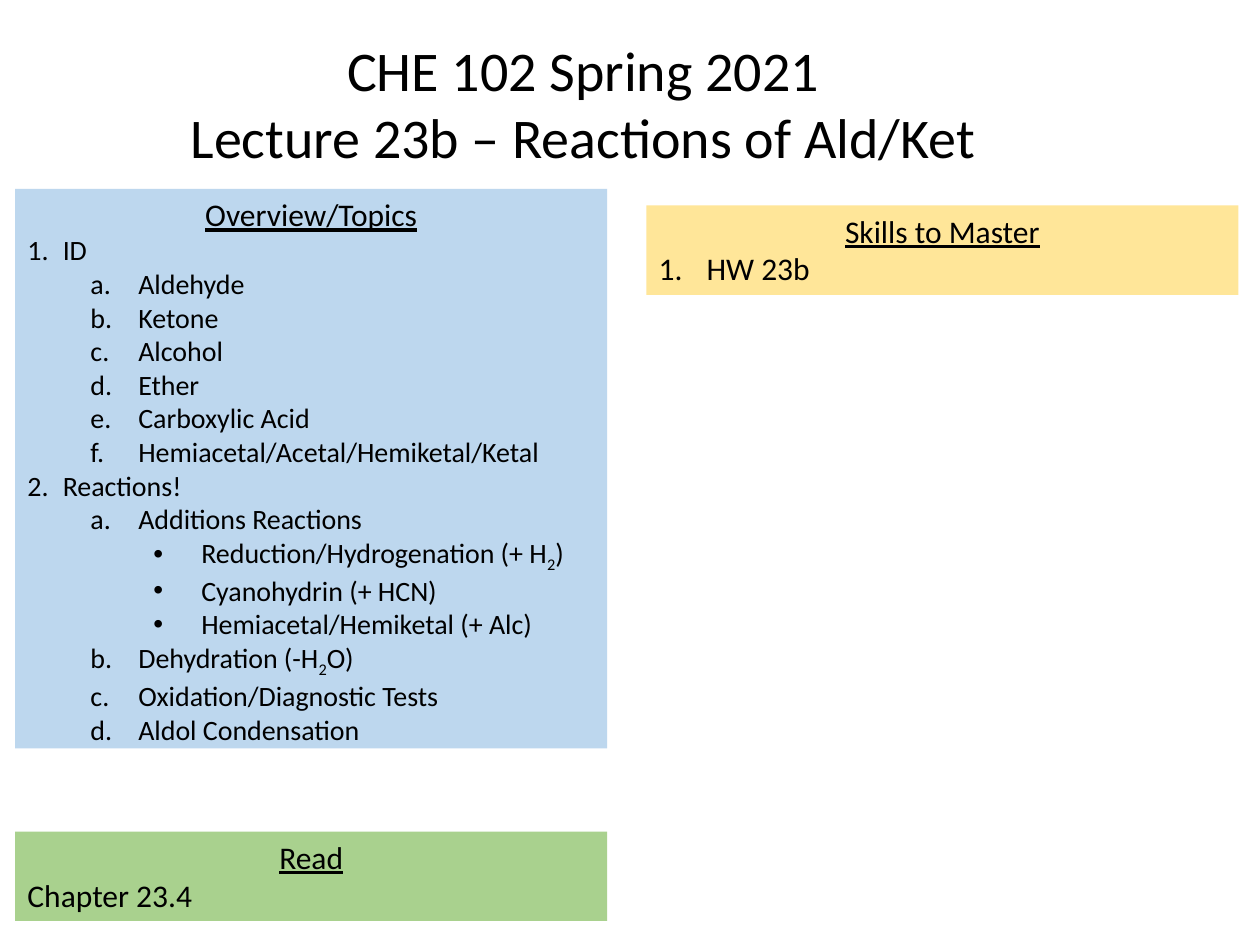
from lxml.etree import SubElement
from pptx import Presentation
from pptx.dml.color import RGBColor
from pptx.enum.shapes import MSO_SHAPE
from pptx.enum.text import MSO_ANCHOR, MSO_AUTO_SIZE, PP_ALIGN
from pptx.oxml.ns import qn
from pptx.util import Inches, Pt

FONT = "Calibri"
TITLE = "CHE 102 Spring 2021\nLecture 23b – Reactions of Ald/Ket"
PANEL_WIDTH = 4.7
LEFT_COLUMN, RIGHT_COLUMN = 0.12, 5.13

# Each item is (list style, text); "_" marks the next character as a subscript.
PANELS = [
    dict(heading="Overview/Topics", left=LEFT_COLUMN, top=1.5, height=4.44,
         fill="BDD7EE", size=16, items=[
             ("topic", "ID"),
             ("subtopic", "Aldehyde"),
             ("subtopic", "Ketone"),
             ("subtopic", "Alcohol"),
             ("subtopic", "Ether"),
             ("subtopic", "Carboxylic Acid"),
             ("subtopic", "Hemiacetal/Acetal/Hemiketal/Ketal"),
             ("topic", "Reactions!"),
             ("subtopic", "Additions Reactions"),
             ("example", "Reduction/Hydrogenation (+ H_2)"),
             ("example", "Cyanohydrin (+ HCN)"),
             ("example", "Hemiacetal/Hemiketal (+ Alc)"),
             ("subtopic", "Dehydration (-H_2O)"),
             ("subtopic", "Oxidation/Diagnostic Tests"),
             ("subtopic", "Aldol Condensation"),
         ]),
    dict(heading="Skills to Master", left=RIGHT_COLUMN, top=1.63, height=0.71,
         fill="FFE699", size=18, items=[("skill", "HW 23b")]),
    dict(heading="Read", left=LEFT_COLUMN, top=6.6, height=0.71,
         fill="A9D18E", size=18, items=[("plain", "Chapter 23.4")]),
]

# style: (level, text indent, hanging indent, numbering scheme or None for a bullet)
LIST_STYLES = {
    "topic": (0, 0.28, 0.28, "arabicPeriod"),
    "skill": (0, 0.38, 0.38, "arabicPeriod"),
    "subtopic": (1, 0.88, 0.38, "alphaLcPeriod"),
    "example": (2, 1.38, 0.38, None),
}


def rgb(color):
    return RGBColor.from_string(color)


def style_run(run, size, underline=False):
    run.font.name = FONT
    run.font.size = Pt(size)
    run.font.color.rgb = rgb("000000")
    run.font.underline = underline


def apply_list_style(paragraph, style):
    """Set the level, hanging indent and number or bullet of a paragraph."""
    level, indent, hanging, numbering = LIST_STYLES[style]
    paragraph.level = level
    properties = paragraph._p.get_or_add_pPr()
    properties.set("marL", str(Inches(indent)))
    properties.set("indent", str(-Inches(hanging)))
    if numbering:
        SubElement(properties, qn("a:buFont"), typeface="+mj-lt")
        SubElement(properties, qn("a:buAutoNum"), type=numbering)
    else:
        SubElement(properties, qn("a:buFont"), typeface="Arial")
        SubElement(properties, qn("a:buChar"), char="•")


def add_item(frame, style, text, size):
    paragraph = frame.add_paragraph()
    paragraph.alignment = PP_ALIGN.LEFT
    if style in LIST_STYLES:
        apply_list_style(paragraph, style)
    before, _, after = text.partition("_")
    for position, part in enumerate((before, after[:1], after[1:])):
        if part:
            run = paragraph.add_run()
            run.text = part
            style_run(run, size)
            if position == 1:
                run.font._element.set("baseline", "-25000")


def add_panel(slide, heading, left, top, height, fill, size, items):
    panel = slide.shapes.add_shape(
        MSO_SHAPE.RECTANGLE, Inches(left), Inches(top),
        Inches(PANEL_WIDTH), Inches(height))
    panel.shadow.inherit = False
    panel.fill.solid()
    panel.fill.fore_color.rgb = rgb(fill)
    panel.line.fill.background()
    frame = panel.text_frame
    frame.word_wrap = True
    frame.auto_size = MSO_AUTO_SIZE.SHAPE_TO_FIT_TEXT
    frame.vertical_anchor = MSO_ANCHOR.TOP
    frame.text = heading
    frame.paragraphs[0].alignment = PP_ALIGN.CENTER
    style_run(frame.paragraphs[0].runs[0], 18, underline=True)
    for style, text in items:
        add_item(frame, style, text, size)


def set_title(slide):
    title = slide.shapes.title
    title.left, title.top = Inches(1.38), Inches(0.23)
    title.width, title.height = Inches(6.5), Inches(1.18)
    frame = title.text_frame
    frame.text = TITLE
    frame.word_wrap = False
    frame.auto_size = MSO_AUTO_SIZE.SHAPE_TO_FIT_TEXT
    frame.vertical_anchor = MSO_ANCHOR.TOP
    for paragraph in frame.paragraphs:
        paragraph.alignment = PP_ALIGN.CENTER
        style_run(paragraph.runs[0], 32)


def main():
    presentation = Presentation()
    presentation.slide_width, presentation.slide_height = Inches(10), Inches(7.5)
    slide = presentation.slides.add_slide(presentation.slide_layouts[5])
    set_title(slide)
    for panel in PANELS:
        add_panel(slide, **panel)
    presentation.save("out.pptx")


if __name__ == "__main__":
    main()
